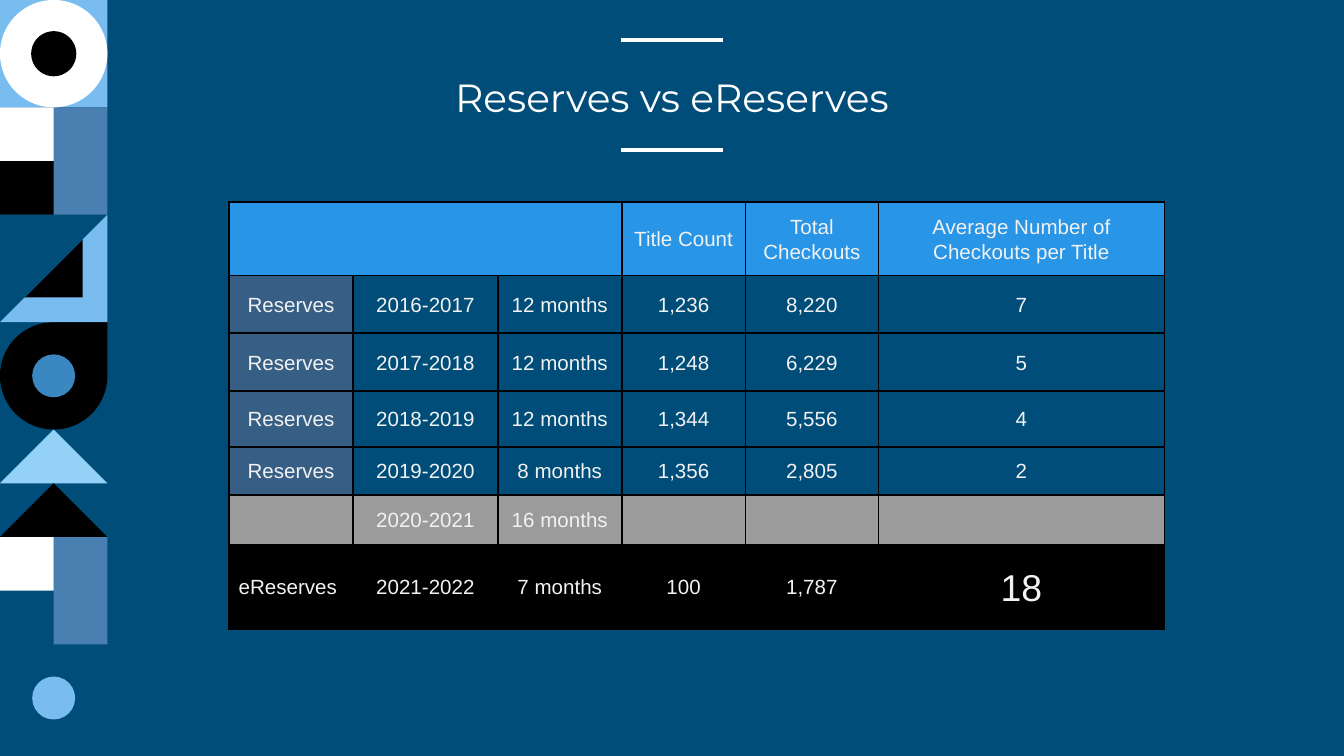
"""Build the slide comparing checkouts of reserves and eReserves."""
import pptx
import pptx.dml.color
import pptx.enum.shapes
import pptx.enum.text
import pptx.oxml
import pptx.oxml.ns
import pptx.util
from pptx.util import Cm, Pt

SHAPE = pptx.enum.shapes.MSO_SHAPE
ALIGN = pptx.enum.text.PP_ALIGN
ANCHOR = pptx.enum.text.MSO_ANCHOR

NAVY, WHITE, BLACK = "004D79", "FFFFFF", "000000"
SKY, STEEL, PALE, AZURE = "79BDF0", "497FB1", "94D1F7", "3A87C1"
HEADER, LABEL, GREY, TABLE_TEXT = "2895E7", "375F85", "9B9B9B", "F2F2F2"

TITLE = "Reserves vs eReserves"
RULE_HEIGHTS = (0.76, 2.83)
ROWS = [
    ("", "", "", "Title Count", "Total Checkouts", "Average Number of Checkouts per Title"),
    ("Reserves", "2016-2017", "12 months", "1,236", "8,220", "7"),
    ("Reserves", "2017-2018", "12 months", "1,248", "6,229", "5"),
    ("Reserves", "2018-2019", "12 months", "1,344", "5,556", "4"),
    ("Reserves", "2019-2020", "8 months", "1,356", "2,805", "2"),
    ("", "2020-2021", "16 months", "", "", ""),
    ("eReserves", "2021-2022", "7 months", "100", "1,787", "18"),
]
ROW_FILLS = {0: HEADER, 5: GREY, 6: BLACK}
COLUMN_WIDTHS = (2.34, 2.74, 2.34, 2.34, 2.51, 5.41)
ROW_HEIGHTS = (1.39, 1.09, 1.09, 1.06, 0.91, 0.93, 1.61)

TILE = 2.03
MOSAIC = [
    (SHAPE.OVAL, 0.3, 6.3, 0.4, 0.4, SKY, 0),
    (SHAPE.TEAR, 0, 3, 1, 1, BLACK, 0),
    (SHAPE.RECTANGLE, 0, 5.5, 0.5, 0.5, NAVY, 0),
    (SHAPE.RECTANGLE, 0.5, 5, 0.5, 1, STEEL, 0),
    (SHAPE.RECTANGLE, 0, 5, 0.5, 0.5, WHITE, 0),
    (SHAPE.ISOSCELES_TRIANGLE, 0, 4, 1, 0.5, PALE, 0),
    (SHAPE.ISOSCELES_TRIANGLE, 0, 4.5, 1, 0.5, BLACK, 0),
    (SHAPE.RIGHT_TRIANGLE, 0, 2, 1, 1, SKY, 270),
    (SHAPE.RIGHT_TRIANGLE, 0.23, 2.23, 0.54, 0.54, BLACK, 270),
    (SHAPE.RIGHT_TRIANGLE, 0.23, 2.23, 0.54, 0.54, NAVY, 90),
    (SHAPE.OVAL, 0.3, 3.3, 0.4, 0.4, AZURE, 0),
    (SHAPE.RECTANGLE, 0, 0, 1, 1, SKY, 0),
    (SHAPE.RECTANGLE, 0, 1, 1, 1, STEEL, 0),
    (SHAPE.OVAL, 0, 0, 1, 1, WHITE, 0),
    (SHAPE.OVAL, 0.29, 0.29, 0.42, 0.42, BLACK, 0),
    (SHAPE.RECTANGLE, 0, 1, 0.5, 0.5, WHITE, 0),
    (SHAPE.RECTANGLE, 0, 1.5, 0.5, 0.5, BLACK, 0),
]


def rgb(value):
    return pptx.dml.color.RGBColor.from_string(value)


def paint(fill, colour):
    fill.solid()
    fill.fore_color.rgb = rgb(colour)


def style(paragraph, face, size, colour, align):
    paragraph.alignment = align
    paragraph.font.name = face
    paragraph.font.size = Pt(size)
    paragraph.font.bold = False
    paragraph.font.color.rgb = rgb(colour)


def add_mosaic(slide):
    for kind, left, top, width, height, colour, turn in MOSAIC:
        box = [Cm(part * TILE) for part in (left, top, width, height)]
        tile = slide.shapes.add_shape(kind, *box)
        tile.shadow.inherit = False
        tile.rotation = turn
        paint(tile.fill, colour)
        tile.line.fill.background()


def add_heading(slide):
    for height in RULE_HEIGHTS:
        rule = slide.shapes.add_connector(
            pptx.enum.shapes.MSO_CONNECTOR.STRAIGHT,
            Cm(11.73), Cm(height), Cm(13.67), Cm(height))
        rule.line.color.rgb = rgb(WHITE)
        rule.line.width = Pt(2.25)
        properties = rule._element.spPr
        properties.append(pptx.oxml.parse_xml(
            f'<a:effectLst {pptx.oxml.ns.nsdecls("a")}/>'))
    heading = slide.shapes.add_textbox(Cm(2.87), Cm(0.41), Cm(19.66), Cm(2.11)).text_frame
    heading.word_wrap = True
    heading.vertical_anchor = ANCHOR.BOTTOM
    heading.margin_left = heading.margin_right = Cm(0.25)
    heading.margin_top = heading.margin_bottom = Cm(0.25)
    heading.text = TITLE
    style(heading.paragraphs[0], "Montserrat", 21, WHITE, ALIGN.CENTER)


def add_borders(cell):
    properties = cell._tc.get_or_add_tcPr()
    for side in ("lnL", "lnR", "lnT", "lnB"):
        properties.append(pptx.oxml.parse_xml(
            f'<a:{side} {pptx.oxml.ns.nsdecls("a")} w="{Pt(1)}"><a:solidFill>'
            f'<a:srgbClr val="{BLACK}"/></a:solidFill></a:{side}>'))


def add_checkouts(slide):
    checkouts = slide.shapes.add_table(
        len(ROWS), len(COLUMN_WIDTHS), Cm(4.33), Cm(3.82),
        Cm(sum(COLUMN_WIDTHS)), Cm(sum(ROW_HEIGHTS))).table
    checkouts.first_row = checkouts.horz_banding = False
    for column, width in zip(checkouts.columns, COLUMN_WIDTHS):
        column.width = Cm(width)
    for row, height in zip(checkouts.rows, ROW_HEIGHTS):
        row.height = Cm(height)
    for r, entries in enumerate(ROWS):
        for c, entry in enumerate(entries):
            cell = checkouts.cell(r, c)
            add_borders(cell)
            colour = ROW_FILLS.get(r, LABEL if c == 0 else None)
            if colour:
                paint(cell.fill, colour)
            else:
                cell.fill.background()
            cell.vertical_anchor = ANCHOR.MIDDLE
            cell.margin_left = cell.margin_right = Cm(0.18)
            cell.margin_top = cell.margin_bottom = 0
            cell.text = entry
            paragraph = cell.text_frame.paragraphs[0]
            paragraph.line_spacing = 1.07
            style(paragraph, "Arial", 20 if entry == "18" else 11, TABLE_TEXT,
                  ALIGN.LEFT if entry == "eReserves" else ALIGN.CENTER)
    checkouts.cell(0, 0).merge(checkouts.cell(0, 2))


def main():
    deck = pptx.Presentation()
    deck.slide_width, deck.slide_height = Cm(25.4), Cm(14.29)
    slide = deck.slides.add_slide(deck.slide_layouts[6])
    paint(slide.background.fill, NAVY)
    add_mosaic(slide)
    add_heading(slide)
    add_checkouts(slide)
    deck.save("out.pptx")


if __name__ == "__main__":
    main()
